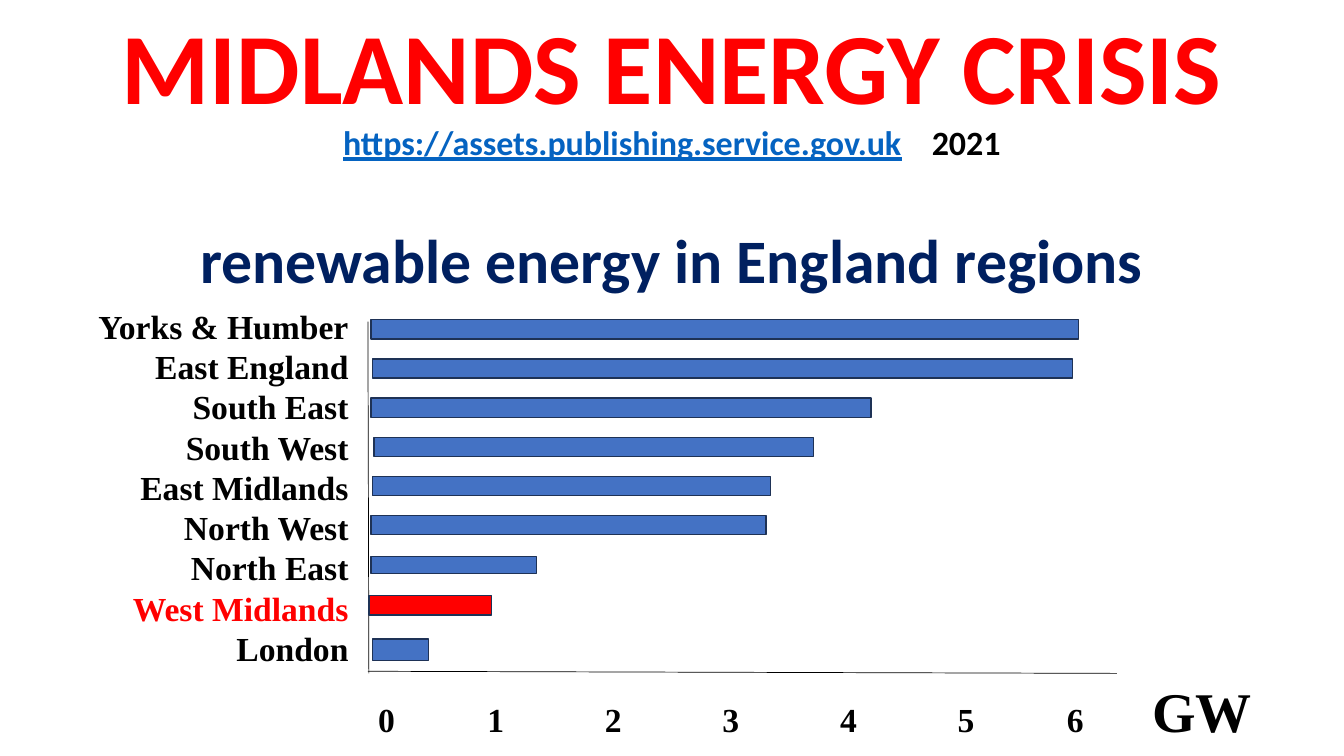
from lxml.etree import SubElement
from pptx import Presentation
from pptx.dml.color import RGBColor
from pptx.enum.shapes import MSO_CONNECTOR, MSO_SHAPE
from pptx.enum.text import MSO_ANCHOR, PP_ALIGN
from pptx.oxml.ns import qn
from pptx.util import Pt


def add_text(paragraph, text, size=24, color="000000", font="Times New Roman", underline=False):
    run = paragraph.add_run()
    run.text = text
    run.font.name = font
    run.font.size = Pt(size)
    run.font.bold = True
    run.font.underline = underline
    run.font.color.rgb = RGBColor.from_string(color)


def add_tabs(paragraph, stops):
    tab_list = SubElement(paragraph._p.get_or_add_pPr(), qn("a:tabLst"))
    for position, alignment in stops:
        SubElement(tab_list, qn("a:tab"), pos=str(Pt(position)), algn=alignment)


presentation = Presentation()
presentation.slide_width = Pt(960)
presentation.slide_height = Pt(540)
slide = presentation.slides.add_slide(presentation.slide_layouts[6])

frames = {}
for name, left, top, width, height in [
    ("title", 0, 60, 960, 104),
    ("scale", 215, 480, 700, 54),
    ("regions", 52, 215, 204, 268),
]:
    text_box = slide.shapes.add_textbox(Pt(left), Pt(top), Pt(width), Pt(height))
    frames[name] = text_box.text_frame
    frames[name].word_wrap = True

title = frames["title"]
title.vertical_anchor = MSO_ANCHOR.MIDDLE
headline = title.paragraphs[0]
source_line = title.add_paragraph()
chart_heading = title.add_paragraph()
for paragraph in title.paragraphs:
    paragraph.line_spacing = 0.9
    paragraph.alignment = PP_ALIGN.CENTER
source_line.alignment = PP_ALIGN.LEFT
chart_heading.space_before = Pt(48)
add_text(headline, "MIDLANDS ENERGY CRISIS", size=72, color="FF0000", font="Calibri")
add_tabs(source_line, [(238, "l"), (658.5, "l")])
add_text(source_line, "\t", font="Calibri")
add_text(source_line, "https://assets.publishing.service.gov.uk", size=24.3,
         color="0563C1", font="Calibri", underline=True)
add_text(source_line, "\t2021", size=24.3, font="Calibri")
add_text(chart_heading, "renewable energy in England regions", size=44.1,
         color="002060", font="Calibri")

for start_x, start_y, end_x, end_y in [
    (262.8, 229.7, 263.5, 481),
    (262.8, 479.5, 797.8, 481),
]:
    axis = slide.shapes.add_connector(
        MSO_CONNECTOR.STRAIGHT, Pt(start_x), Pt(start_y), Pt(end_x), Pt(end_y))
    axis.line.color.rgb = RGBColor.from_string("000000")
    axis.line.width = Pt(0.5)
    SubElement(axis._element.spPr, qn("a:effectLst"))

scale = frames["scale"].paragraphs[0]
number_centers = [54, 132, 216, 300, 384, 468, 546]
add_tabs(scale, [(center, "ctr") for center in number_centers] + [(601, "l")])
add_text(scale, "".join(f"\t{number}" for number in range(7)) + "\t")
add_text(scale, "GW", size=40)

regions = [
    ("Yorks & Humber", 265, 228.4, 505.4, 13.7),
    ("East England", 265.9, 256.4, 500.4, 13.7),
    ("South East", 265, 284.4, 357.1, 13.7),
    ("South West", 267.1, 312.4, 313.9, 13.7),
    ("East Midlands", 265.9, 340.4, 284.4, 13.7),
    ("North West", 265, 368.2, 282.2, 13.7),
    ("North East", 265, 397.4, 118.1, 12.2),
    ("West Midlands", 263.5, 425.5, 87.8, 13.7),
    ("London", 265.9, 456.5, 40.3, 15.1),
]
for index, (region, left, top, width, height) in enumerate(regions):
    highlighted = region == "West Midlands"
    label = frames["regions"].add_paragraph() if index else frames["regions"].paragraphs[0]
    label.alignment = PP_ALIGN.RIGHT
    label.line_spacing = Pt(28.75)
    add_text(label, region, color="FF0000" if highlighted else "000000")

    bar = slide.shapes.add_shape(MSO_SHAPE.RECTANGLE, Pt(left), Pt(top), Pt(width), Pt(height))
    bar.shadow.inherit = False
    bar.fill.solid()
    bar.fill.fore_color.rgb = RGBColor.from_string("FF0000" if highlighted else "4472C4")
    bar.line.color.rgb = RGBColor.from_string("1E3256")
    bar.line.width = Pt(1)

presentation.save("out.pptx")
